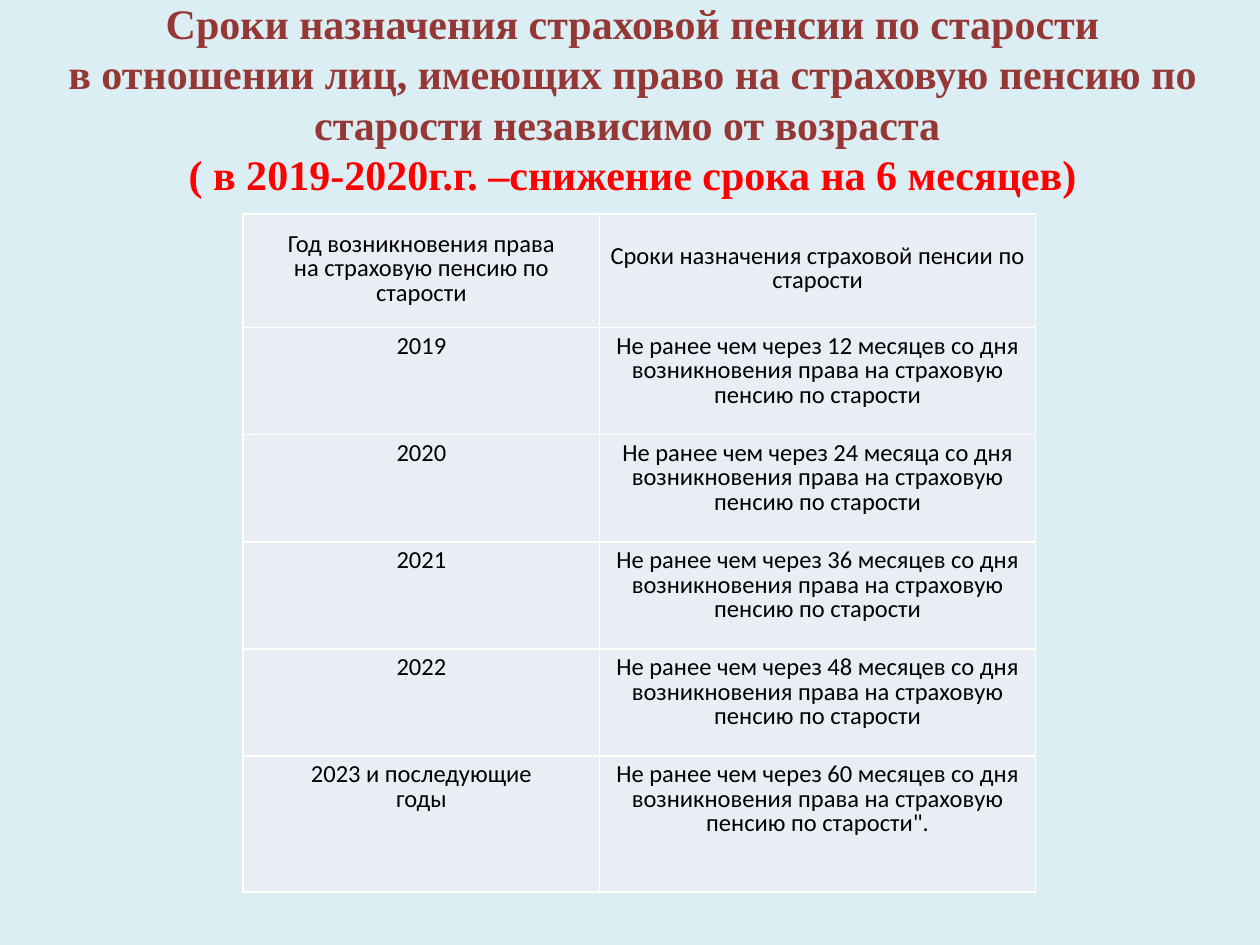
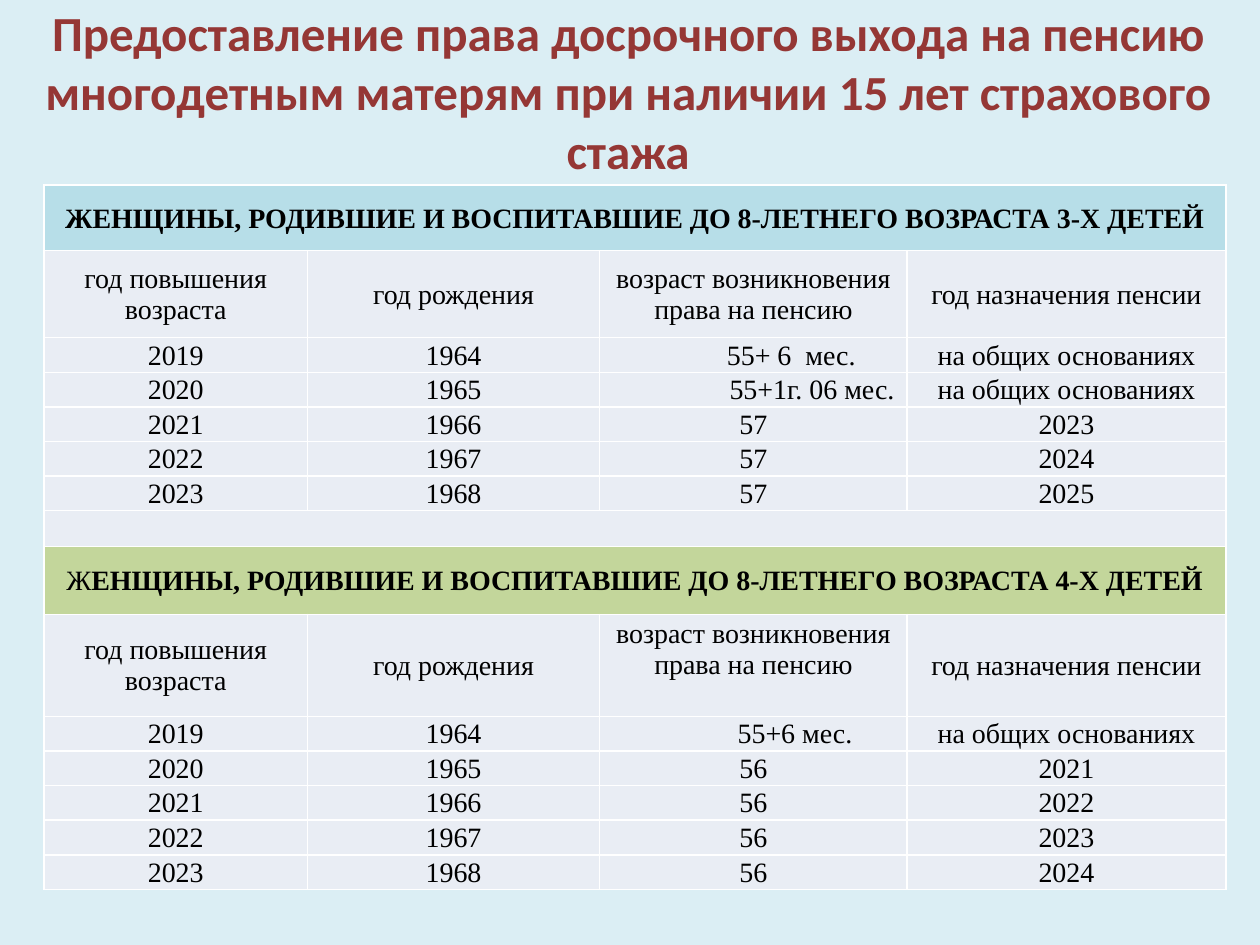
"""Builds two slides with tables on pension terms and early retirement for mothers."""
from lxml import etree
from pptx import Presentation
from pptx.dml.color import RGBColor
from pptx.enum.text import MSO_ANCHOR, MSO_AUTO_SIZE, PP_ALIGN
from pptx.oxml.ns import qn
from pptx.util import Inches, Pt

TOP, MIDDLE = MSO_ANCHOR.TOP, MSO_ANCHOR.MIDDLE
CENTER = PP_ALIGN.CENTER
NO_AUTOFIT = MSO_AUTO_SIZE.NONE

BACKGROUND = RGBColor(0xDB, 0xEE, 0xF4)
TITLE_RED = RGBColor(0x95, 0x37, 0x35)
RED = RGBColor(0xFF, 0x00, 0x00)
BLACK = RGBColor(0x00, 0x00, 0x00)
CELL_GREY = RGBColor(0xE9, 0xED, 0xF4)
BAND_BLUE = RGBColor(0xB7, 0xDE, 0xE8)
BAND_GREEN = RGBColor(0xC3, 0xD6, 0x9B)
SANS, SERIF = "Calibri", "Times New Roman"


def write(tf, paragraphs, font, size, spacing=None):
    """Writes paragraphs given as lists of (text, colour, bold) runs."""
    for i, runs in enumerate(paragraphs):
        p = tf.paragraphs[0] if i == 0 else tf.add_paragraph()
        p.alignment = CENTER
        if spacing:
            p.line_spacing = spacing
        for text, color, bold in runs:
            r = p.add_run()
            r.text = text
            r.font.name, r.font.size, r.font.bold = font, size, bold
            r.font.color.rgb = color


def add_table(s, left, top, col_widths, row_heights, margins):
    """Adds a plain grey table with thin white borders."""
    table = s.shapes.add_table(
        len(row_heights), len(col_widths), Inches(left), Inches(top),
        Inches(sum(col_widths)), Inches(sum(row_heights))).table
    table.first_row = table.horz_banding = False
    for col, width in zip(table.columns, col_widths):
        col.width = Inches(width)
    for row, height in zip(table.rows, row_heights):
        row.height = Inches(height)
    for cell in table.iter_cells():
        (cell.margin_left, cell.margin_top,
         cell.margin_right, cell.margin_bottom) = map(Inches, margins)
        tc_pr = cell._tc.get_or_add_tcPr()
        for side in ("a:lnL", "a:lnR", "a:lnT", "a:lnB"):
            ln = etree.SubElement(tc_pr, qn(side), w=str(Pt(1)))
            fill = etree.SubElement(ln, qn("a:solidFill"))
            etree.SubElement(fill, qn("a:srgbClr"), val="FFFFFF")
        cell.fill.solid()
        cell.fill.fore_color.rgb = CELL_GREY
    return table


prs = Presentation()
prs.slide_width, prs.slide_height = Inches(10), Inches(7.5)
prs.slide_master.background.fill.solid()
prs.slide_master.background.fill.fore_color.rgb = BACKGROUND

titles = [
    ((0.02, -0.07, 10, 1.72), SERIF, Pt(24), Pt(28.8), [
        ("Сроки назначения страховой пенсии по старости", TITLE_RED),
        ("в отношении лиц, имеющих право на страховую пенсию по старости "
         "независимо от возраста ", TITLE_RED),
        ("( в 2019-2020г.г. –снижение срока на 6 месяцев)", RED)]),
    ((-0.03, -0.03, 10.03, 1.51), SANS, Pt(28), None, [
        ("Предоставление права досрочного выхода на пенсию многодетным "
         "матерям при наличии 15 лет страхового стажа", TITLE_RED)]),
]
for box, font, size, spacing, lines in titles:
    s = prs.slides.add_slide(prs.slide_layouts[5])
    title = s.shapes.title
    title.left, title.top, title.width, title.height = map(Inches, box)
    tf = title.text_frame
    tf.word_wrap, tf.auto_size, tf.vertical_anchor = True, NO_AUTOFIT, TOP
    write(tf, [[(text, color, True)] for text, color in lines], font, size, spacing)

terms_slide, mothers_slide = prs.slides

terms = [
    (["Год возникновения права", "на страховую пенсию по старости"],
     "Сроки назначения страховой пенсии по старости")]
for year, wait, end in [
        (["2019"], "12 месяцев", ""), (["2020"], "24 месяца", ""),
        (["2021"], "36 месяцев", ""), (["2022"], "48 месяцев", ""),
        (["2023 и последующие", "годы"], "60 месяцев", '".')]:
    terms.append((year, f"Не ранее чем через {wait} со дня возникновения права "
                        f"на страховую пенсию по старости{end}"))

table = add_table(terms_slide, 1.93, 1.7, [2.83, 3.46],
                  [0.9] + [0.85] * 4 + [1.08], (0.04, 0.07, 0.04, 0.07))
for row, (years, term) in enumerate(terms):
    for col, paragraphs in enumerate((years, [term])):
        cell = table.cell(row, col)
        cell.vertical_anchor = TOP if row else MIDDLE
        write(cell.text_frame, [[(text, BLACK, False)] for text in paragraphs],
              SANS, Pt(14), Pt(14))

headings = ["год повышения возраста", "год рождения",
            "возраст возникновения права на пенсию", "год назначения пенсии"]
general = "на общих основаниях"
three_children = [("55+ 6  мес.", general), ("55+1г. 06 мес.", general),
                  ("57", "2023"), ("57", "2024"), ("57", "2025")]
four_children = [("55+6 мес.", general), ("56", "2021"), ("56", "2022"),
                 ("56", "2023"), ("56", "2024")]
age_indents = {"55+ 6  мес.": 0.61, "55+1г. 06 мес.": 0.94, "55+6 мес.": 0.67}
band_rest = "ЕНЩИНЫ, РОДИВШИЕ И ВОСПИТАВШИЕ ДО 8-ЛЕТНЕГО ВОЗРАСТА {}-Х ДЕТЕЙ"
line = 0.275

table = add_table(mothers_slide, 0.35, 1.47, [2.09, 2.32, 2.44, 2.53],
                  [0.52, 0.69] + [line] * 6 + [0.54, 0.81] + [line] * 5,
                  (0.01, 0.01, 0.01, 0))
for first, children, color, initial_bold, ages in [
        (0, 3, BAND_BLUE, True, three_children),
        (8, 4, BAND_GREEN, False, four_children)]:
    band = table.cell(first, 0)
    band.merge(table.cell(first, 3))
    band.fill.fore_color.rgb = color
    band.vertical_anchor = MIDDLE
    write(band.text_frame, [[("Ж", BLACK, initial_bold),
                             (band_rest.format(children), BLACK, True)]],
          SERIF, Pt(16))
    rows = [headings] + [[str(2019 + i), str(1964 + i), age, start]
                         for i, (age, start) in enumerate(ages)]
    for row, texts in enumerate(rows, first + 1):
        for col, text in enumerate(texts):
            cell = table.cell(row, col)
            cell.vertical_anchor = MIDDLE
            cell.margin_left = Inches(age_indents.get(text, 0.01))
            write(cell.text_frame, [[(text, BLACK, False)]], SERIF, Pt(16))

table.cell(9, 2).vertical_anchor = TOP
table.cell(9, 2).margin_top = Inches(0.03)
gap = table.cell(7, 0)
gap.merge(table.cell(7, 3))
for col in range(4):
    p = table.cell(7, col).text_frame.paragraphs[0]
    etree.SubElement(p._p, qn("a:endParaRPr"), sz="1600")

prs.save("out.pptx")
